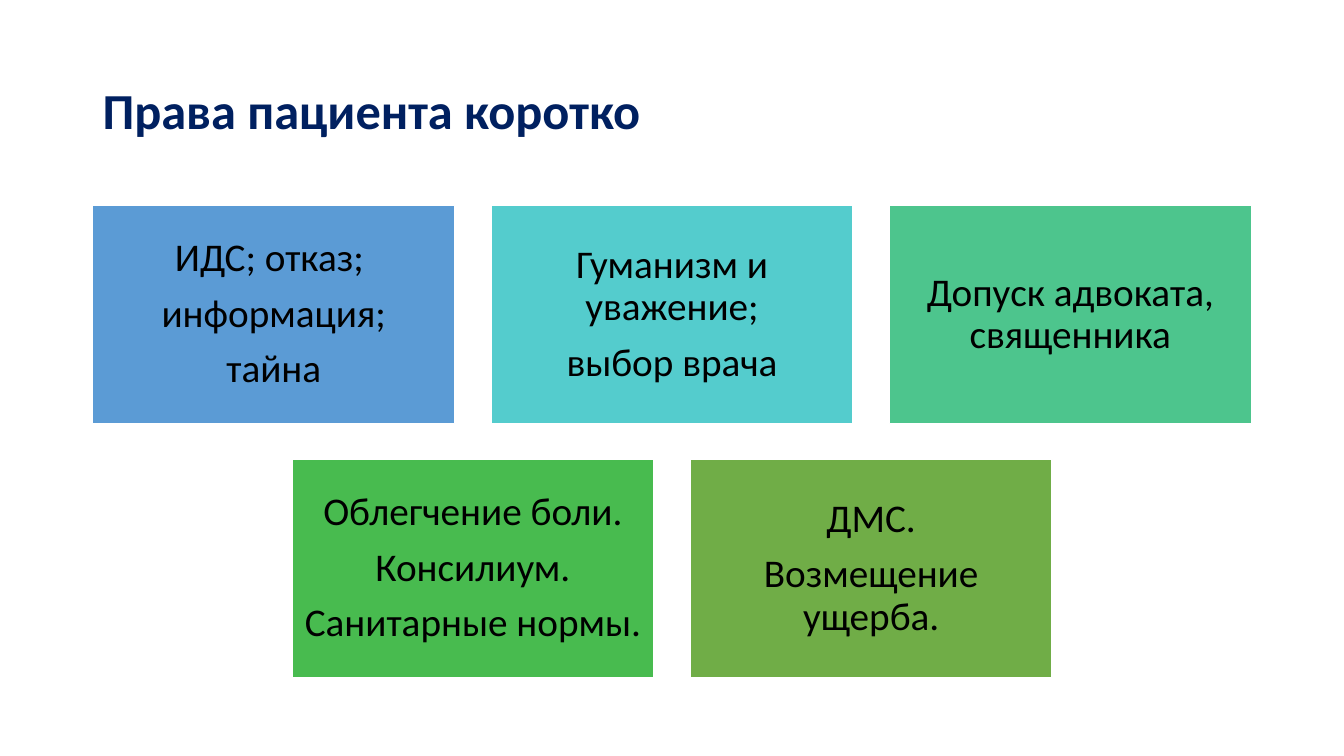
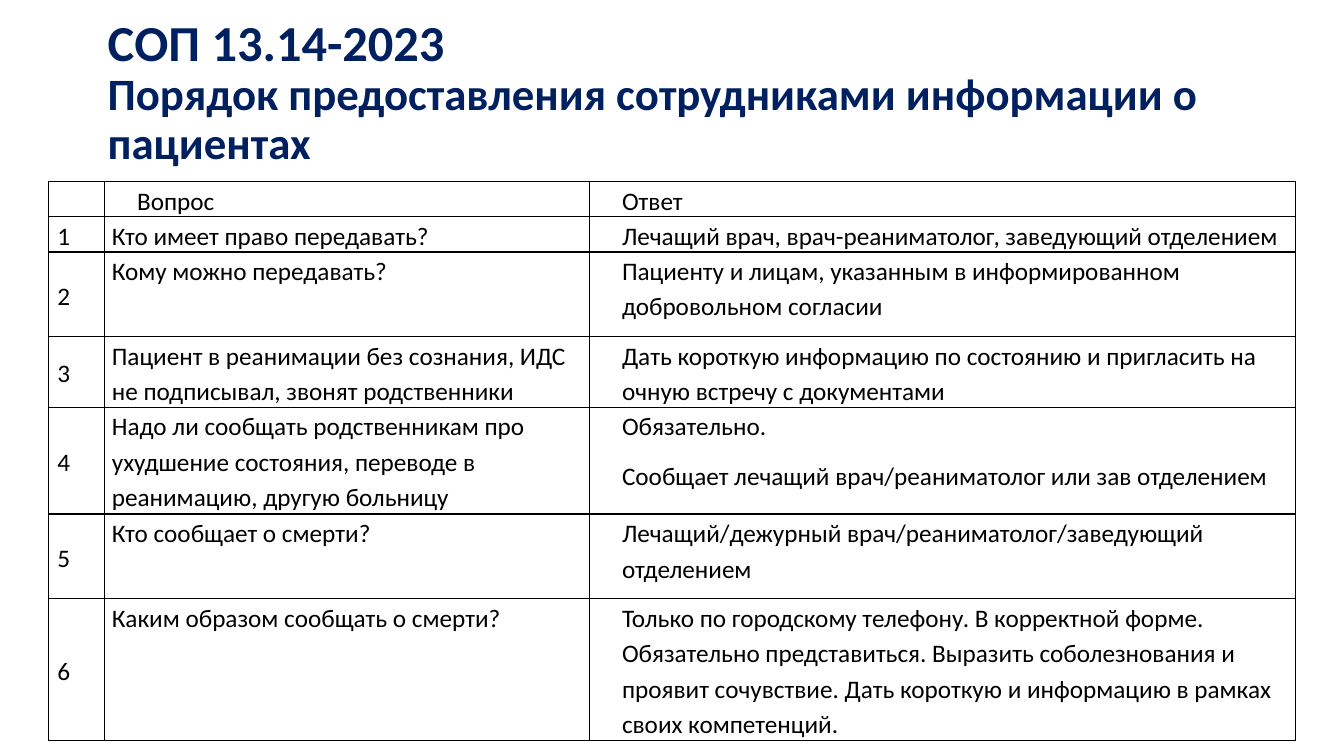
from lxml import etree
from pptx import Presentation
from pptx import util as u
from pptx.dml.color import RGBColor
from pptx.enum import shapes, text
from pptx.oxml.ns import qn

FONT = "Calibri"
NAVY = RGBColor(0x00, 0x20, 0x60)
BLACK = RGBColor(0, 0, 0)
WHITE = RGBColor(0xFF, 0xFF, 0xFF)
BLUE = RGBColor(0x5B, 0x9B, 0xD5)
TURQUOISE = RGBColor(0x54, 0xCC, 0xCD)
MINT = RGBColor(0x4D, 0xC5, 0x8D)
GREEN = RGBColor(0x48, 0xBB, 0x4F)
OLIVE = RGBColor(0x70, 0xAD, 0x47)

SLIDE_W, SLIDE_H = 13.33, 7.5
TITLE_W, TITLE_H = 11.5, 1.45
CARD_W, CARD_H, CARD_GAP, CARDS_TOP = 3.59, 2.16, 0.36, 2.04

RIGHTS = [
    [
        (BLUE, "ИДС; отказ; \nинформация;\nтайна"),
        (TURQUOISE, "Гуманизм и уважение;\nвыбор врача"),
        (MINT, "Допуск адвоката, священника"),
    ],
    [
        (GREEN, "Облегчение боли.\nКонсилиум.\nСанитарные нормы."),
        (OLIVE, "ДМС.\nВозмещение ущерба."),
    ],
]

QUESTIONS = [
    ("Кто имеет право передавать?",
     "Лечащий врач, врач-реаниматолог, заведующий отделением"),
    ("Кому можно передавать?",
     "Пациенту и лицам, указанным в информированном добровольном согласии"),
    ("Пациент в реанимации без сознания, ИДС не подписывал, звонят родственники",
     "Дать короткую информацию по состоянию и пригласить на очную встречу с документами"),
    ("Надо ли сообщать родственникам про ухудшение состояния, переводе в реанимацию, "
     "другую больницу",
     "Обязательно.\nСообщает лечащий врач/реаниматолог или зав отделением"),
    ("Кто сообщает о смерти?",
     "Лечащий/дежурный врач/реаниматолог/заведующий отделением"),
    ("Каким образом сообщать о смерти?",
     "Только по городскому телефону. В корректной форме. Обязательно представиться. "
     "Выразить соболезнования и проявит сочувствие. Дать короткую и информацию в рамках "
     "своих компетенций."),
]
COLUMN_WIDTHS = [0.56, 4.81, 7]
ROW_HEIGHTS = [0.35, 0.35, 0.84, 0.7, 1.06, 0.84, 1.41]


def inches(*lengths):
    return [u.Inches(length) for length in lengths]


def style_run(run, size, color, bold=False):
    run.font.name = FONT
    run.font.size = u.Pt(size)
    run.font.color.rgb = color
    run.font.bold = bold


def style_paragraphs(frame, size, line_spacing, space_after, align, indent=0):
    for paragraph in frame.paragraphs:
        paragraph.alignment = align
        paragraph.line_spacing = line_spacing
        paragraph.space_after = u.Pt(space_after)
        if indent:
            paragraph._p.get_or_add_pPr().set("marL", str(u.Inches(indent)))
        for run in paragraph.runs:
            style_run(run, size, BLACK)


def add_title(slide, left, top, wording, sizes):
    """Title whose lines, parted by vertical tabs, each have their own size."""
    frame = slide.shapes.add_textbox(*inches(left, top, TITLE_W, TITLE_H)).text_frame
    frame.word_wrap = True
    frame.vertical_anchor = text.MSO_ANCHOR.MIDDLE
    heading = frame.paragraphs[0]
    heading.text = wording
    heading.line_spacing = 0.9
    for run, size in zip(heading.runs, sizes):
        style_run(run, size, NAVY, bold=True)


def add_card(slide, left, top, color, wording):
    card = slide.shapes.add_shape(
        shapes.MSO_SHAPE.RECTANGLE, *inches(left, top, CARD_W, CARD_H))
    card.shadow.inherit = False
    card.fill.solid()
    card.fill.fore_color.rgb = color
    card.line.color.rgb = WHITE
    card.line.width = u.Pt(1)
    frame = card.text_frame
    frame.word_wrap = True
    frame.vertical_anchor = text.MSO_ANCHOR.MIDDLE
    frame.margin_left = frame.margin_right = u.Inches(0.12)
    frame.margin_top = frame.margin_bottom = u.Inches(0.12)
    frame.text = wording
    style_paragraphs(frame, 28, 0.9, 9.5, text.PP_ALIGN.CENTER)


def add_card_rows(slide, rows):
    """Rows of cards, each row centred on the slide."""
    for row_index, row in enumerate(rows):
        row_width = len(row) * (CARD_W + CARD_GAP) - CARD_GAP
        left = (SLIDE_W - row_width) / 2
        top = CARDS_TOP + row_index * (CARD_H + CARD_GAP)
        for index, (color, wording) in enumerate(row):
            add_card(slide, left + index * (CARD_W + CARD_GAP), top, color, wording)


def add_borders(cell):
    properties = cell._tc.get_or_add_tcPr()
    for position, side in enumerate(("lnL", "lnR", "lnT", "lnB")):
        border = etree.Element(qn(f"a:{side}"), w=str(u.Pt(1)))
        fill = etree.SubElement(border, qn("a:solidFill"))
        etree.SubElement(fill, qn("a:srgbClr"), val=str(BLACK))
        properties.insert(position, border)


def fill_cell(cell, wording, indent, anchor):
    cell.fill.background()
    cell.margin_left = cell.margin_right = u.Inches(0.07)
    cell.margin_top = cell.margin_bottom = 0
    cell.vertical_anchor = anchor
    cell.text_frame.text = wording
    style_paragraphs(cell.text_frame, 18, 1.15, 10, text.PP_ALIGN.LEFT, indent)
    add_borders(cell)


def add_question_table(slide, left, top):
    rows = [("", "Вопрос", "Ответ")]
    rows += [(str(number), *pair) for number, pair in enumerate(QUESTIONS, 1)]
    table = slide.shapes.add_table(
        len(rows), len(COLUMN_WIDTHS),
        *inches(left, top, sum(COLUMN_WIDTHS), sum(ROW_HEIGHTS))).table
    table.first_row = table.horz_banding = False
    for column, width in zip(table.columns, COLUMN_WIDTHS):
        column.width = u.Inches(width)
    for row_index, (row, height) in enumerate(zip(rows, ROW_HEIGHTS)):
        table.rows[row_index].height = u.Inches(height)
        indents = (0.02, 0 if row_index else 0.25, 0.25)
        for column_index, (wording, indent) in enumerate(zip(row, indents)):
            anchor = text.MSO_ANCHOR.TOP if column_index else text.MSO_ANCHOR.MIDDLE
            fill_cell(table.cell(row_index, column_index), wording, indent, anchor)


def main():
    deck = Presentation()
    deck.slide_width, deck.slide_height = inches(SLIDE_W, SLIDE_H)
    blank = deck.slide_layouts[6]

    rights = deck.slides.add_slide(blank)
    add_title(rights, 0.92, 0.4, "Права пациента коротко", [36])
    add_card_rows(rights, RIGHTS)

    procedure = deck.slides.add_slide(blank)
    add_title(
        procedure, 0.97, 0.2,
        "СОП 13.14-2023 \vПорядок предоставления сотрудниками информации о пациентах",
        [36, 32])
    add_question_table(procedure, 0.48, 1.8)

    deck.save("out.pptx")


if __name__ == "__main__":
    main()
